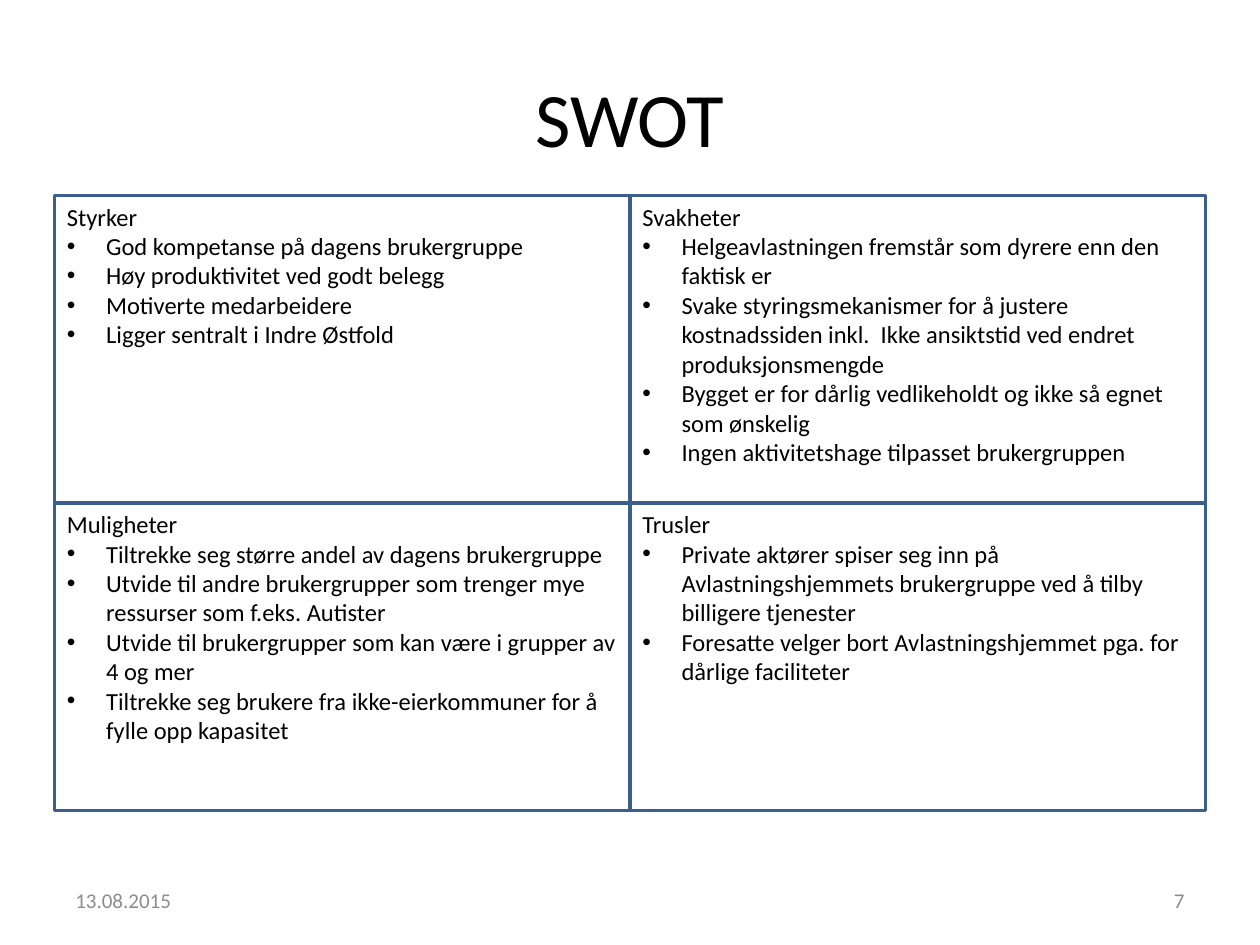
from lxml.etree import SubElement
from pptx import Presentation
from pptx.dml.color import RGBColor
from pptx.enum.shapes import MSO_SHAPE
from pptx.enum.text import MSO_ANCHOR, PP_ALIGN
from pptx.oxml.ns import qn
from pptx.util import Cm, Pt

COLORS = {"text": "000000", "border": "3A5F8C", "footer": "8C8C8C"}


def write_paragraph(paragraph, text, size, color, alignment=PP_ALIGN.LEFT):
    paragraph.alignment = alignment
    run = paragraph.add_run()
    run.text = text
    font_format = {"name": "Calibri", "size": Pt(size)}
    for name, value in font_format.items():
        setattr(run.font, name, value)
    run.font.color.rgb = RGBColor.from_string(COLORS[color])


def add_bullet(paragraph, indent):
    properties = paragraph._p.get_or_add_pPr()
    properties.set("marL", str(indent))
    properties.set("indent", str(-indent))
    SubElement(properties, qn("a:buFont"), typeface="Arial")
    SubElement(properties, qn("a:buChar"), char="•")


presentation = Presentation()
presentation.slide_width = Cm(25.4)
presentation.slide_height = Cm(19.05)
slide = presentation.slides.add_slide(presentation.slide_layouts[6])

# Title, date and slide number
labels = [
    ("SWOT", 1.27, 0.76, 22.86, 3.18, 44, "text", PP_ALIGN.CENTER),
    ("13.08.2015", 1.27, 17.65, 5.93, 1.01, 12, "footer", PP_ALIGN.LEFT),
    ("7", 18.2, 17.65, 5.93, 1.01, 12, "footer", PP_ALIGN.RIGHT),
]
for text, left, top, width, height, size, color, alignment in labels:
    text_box = slide.shapes.add_textbox(Cm(left), Cm(top), Cm(width), Cm(height))
    frame_format = {"word_wrap": True, "vertical_anchor": MSO_ANCHOR.MIDDLE}
    for name, value in frame_format.items():
        setattr(text_box.text_frame, name, value)
    write_paragraph(text_box.text_frame.paragraphs[0], text, size, color, alignment)

# SWOT quadrants, row by row
quadrants = [
    ("Styrker", [
        "God kompetanse på dagens brukergruppe",
        "Høy produktivitet ved godt belegg",
        "Motiverte medarbeidere",
        "Ligger sentralt i Indre Østfold",
    ]),
    ("Svakheter", [
        "Helgeavlastningen fremstår som dyrere enn den faktisk er",
        "Svake styringsmekanismer for å justere kostnadssiden inkl.  "
        "Ikke ansiktstid ved endret produksjonsmengde",
        "Bygget er for dårlig vedlikeholdt og ikke så egnet som ønskelig",
        "Ingen aktivitetshage tilpasset brukergruppen",
    ]),
    ("Muligheter", [
        "Tiltrekke seg større andel av dagens brukergruppe",
        "Utvide til andre brukergrupper som trenger mye ressurser som f.eks. Autister",
        "Utvide til brukergrupper som kan være i grupper av 4 og mer",
        "Tiltrekke seg brukere fra ikke-eierkommuner for å fylle opp kapasitet",
    ]),
    ("Trusler", [
        "Private aktører spiser seg inn på Avlastningshjemmets brukergruppe "
        "ved å tilby billigere tjenester",
        "Foresatte velger bort Avlastningshjemmet pga. for dårlige faciliteter",
    ]),
]
grid_left, grid_top = Cm(1.1), Cm(3.94)
cell_width, cell_height = Cm(11.6), Cm(6.2)
for index, (heading, points) in enumerate(quadrants):
    row, column = divmod(index, 2)
    shape = slide.shapes.add_shape(
        MSO_SHAPE.RECTANGLE,
        grid_left + column * cell_width, grid_top + row * cell_height,
        cell_width, cell_height,
    )
    shape.shadow.inherit = False
    shape.fill.background()
    shape.line.color.rgb = RGBColor.from_string(COLORS["border"])
    shape.line.width = Pt(2)
    frame = shape.text_frame
    frame_format = {"word_wrap": True, "vertical_anchor": MSO_ANCHOR.TOP}
    for name, value in frame_format.items():
        setattr(frame, name, value)
    write_paragraph(frame.paragraphs[0], heading, 14, "text")
    for point in points:
        paragraph = frame.add_paragraph()
        write_paragraph(paragraph, point, 14, "text")
        add_bullet(paragraph, Cm(0.79))

presentation.save("out.pptx")
